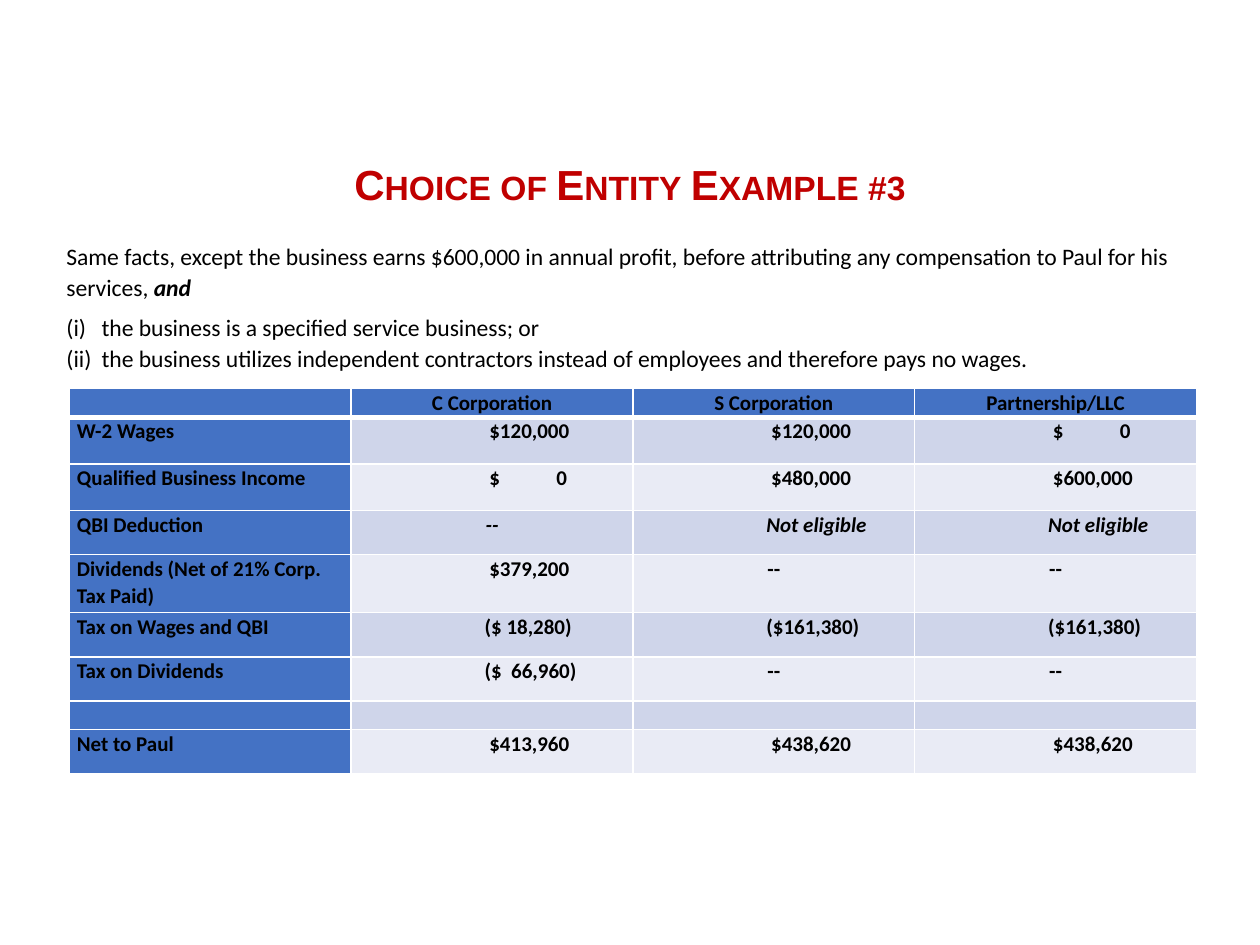
from lxml.etree import SubElement
from pptx import Presentation
from pptx.dml.color import RGBColor
from pptx.enum.text import MSO_ANCHOR as Anchor, PP_ALIGN as Align
from pptx.oxml.ns import qn
from pptx.util import Cm, Pt

# Content
TITLE = "Choice of Entity Example #3"
FACTS = ("Same facts, except the business earns $600,000 in annual profit, "
         "before attributing any compensation to Paul for his services, ")
CONDITIONS = [
    "the business is a specified service business; or",
    "the business utilizes independent contractors instead of employees "
    "and therefore pays no wages.",
]
HEADINGS = ["", "C Corporation", "S Corporation", "Partnership/LLC"]
# Row height in cm, label, one value per entity
ROWS = [
    (0.94, "W-2 Wages", " $120,000", " $120,000", " $\t0"),
    (0.94, "Qualified Business Income", " $\t0", " $480,000", " $600,000"),
    (0.89, "QBI Deduction", "--", "Not eligible", "Not eligible"),
    (1.17, "Dividends (Net of 21% Corp. Tax Paid)", " $379,200", "--", "--"),
    (0.89, "Tax on Wages and QBI", "($ 18,280)", "($161,380)", "($161,380)"),
    (0.89, "Tax on Dividends", "($  66,960)", "--", "--"),
    (0.58, "", "", "", ""),
    (0.89, "Net to Paul", " $413,960", " $438,620", " $438,620"),
]

# Style
RED = RGBColor(0xC0, 0x00, 0x00)
BLACK = RGBColor(0x00, 0x00, 0x00)
WHITE = RGBColor(0xFF, 0xFF, 0xFF)
BLUE = RGBColor(0x44, 0x72, 0xC4)
BANDS = [RGBColor(0xCF, 0xD5, 0xEA), RGBColor(0xE9, 0xEB, 0xF5)]
HEADER_HEIGHT = 0.58
COLUMN_WIDTH = 5.68
TAB_STOPS = [(2.54, "l"), (4.2, "r")]


def write(para, text, size=13.5, font="Calibri", color=BLACK, bold=False,
          italic=False, align=None, spacing=1.07, after=0):
    """Add a formatted span to a paragraph and return the span."""
    para.line_spacing = spacing
    para.space_after = Pt(after)
    if align is not None:
        para.alignment = align
    span = para.add_run()
    span.text = text
    span.font.size, span.font.name = Pt(size), font
    span.font.bold, span.font.italic = bold, italic
    span.font.color.rgb = color
    return span


def add_box(page, left, top, width, height, anchor=Anchor.TOP):
    frame = page.shapes.add_textbox(Cm(left), Cm(top), Cm(width), Cm(height)).text_frame
    frame.word_wrap = True
    frame.vertical_anchor = anchor
    return frame


def number(para):
    """Number a paragraph (i), (ii) with a hanging indent."""
    props = para._p.get_or_add_pPr()
    props.set("marL", str(Cm(0.71)))
    props.set("indent", str(-Cm(0.71)))
    SubElement(props, qn("a:buFont"), typeface="+mj-lt")
    SubElement(props, qn("a:buAutoNum"), type="romanLcParenBoth")


def set_tabs(para):
    stops = SubElement(para._p.get_or_add_pPr(), qn("a:tabLst"))
    for position, side in TAB_STOPS:
        SubElement(stops, qn("a:tab"), pos=str(Cm(position)), algn=side)


def set_borders(cell, bottom):
    props = cell._tc.get_or_add_tcPr()
    for index, (side, width) in enumerate(
            [("lnL", 1), ("lnR", 1), ("lnT", 1), ("lnB", bottom)]):
        line = props.makeelement(qn("a:" + side), {"w": str(Pt(width))})
        fill = SubElement(line, qn("a:solidFill"))
        SubElement(fill, qn("a:srgbClr"), val=str(WHITE))
        props.insert(index, line)


def fill_cell(cell, text, row, column):
    cell.margin_left = cell.margin_right = Cm(0.15)
    cell.margin_top = cell.margin_bottom = 0
    cell.fill.solid()
    is_label = row == 0 or column == 0
    cell.fill.fore_color.rgb = BLUE if is_label else BANDS[(row - 1) % 2]
    set_borders(cell, bottom=3 if row == 0 else 1)
    para = cell.text_frame.paragraphs[0]
    if not text:
        SubElement(para._p, qn("a:endParaRPr"), sz="1200")
        return
    centered = row == 0 or text == "--"
    tabbed = not (is_label or centered)
    write(para, "\t" + text if tabbed else text, size=12, bold=True,
          italic=row == 3 and column > 0, align=Align.CENTER if centered else None)
    if tabbed:
        set_tabs(para)


deck = Presentation()
deck.slide_width, deck.slide_height = Cm(25.4), Cm(19.05)
page = deck.slides.add_slide(deck.slide_layouts[6])

# Title
frame = add_box(page, 1.75, 2.39, 21.9, 2.77, Anchor.MIDDLE)
title = write(frame.paragraphs[0], TITLE, size=24, font="Arial", color=RED,
              bold=True, align=Align.CENTER, spacing=0.9)
title.font._element.set("cap", "small")

# Facts and numbered conditions
frame = add_box(page, 1.09, 4.72, 23.55, 2.95)
para = frame.paragraphs[0]
write(para, FACTS, after=6)
write(para, "and", bold=True, italic=True, after=6)
for condition in CONDITIONS:
    para = frame.add_paragraph()
    write(para, condition, after=6 if condition == CONDITIONS[-1] else 0)
    number(para)

# Comparison table
lines = [(HEADER_HEIGHT, *HEADINGS)] + ROWS
table = page.shapes.add_table(
    len(lines), len(HEADINGS), Cm(1.4), Cm(7.83),
    Cm(COLUMN_WIDTH * len(HEADINGS)), Cm(sum(line[0] for line in lines))).table
for column in table.columns:
    column.width = Cm(COLUMN_WIDTH)
for row, (height, *texts) in enumerate(lines):
    table.rows[row].height = Cm(height)
    for column, text in enumerate(texts):
        fill_cell(table.cell(row, column), text, row, column)

deck.save("out.pptx")
